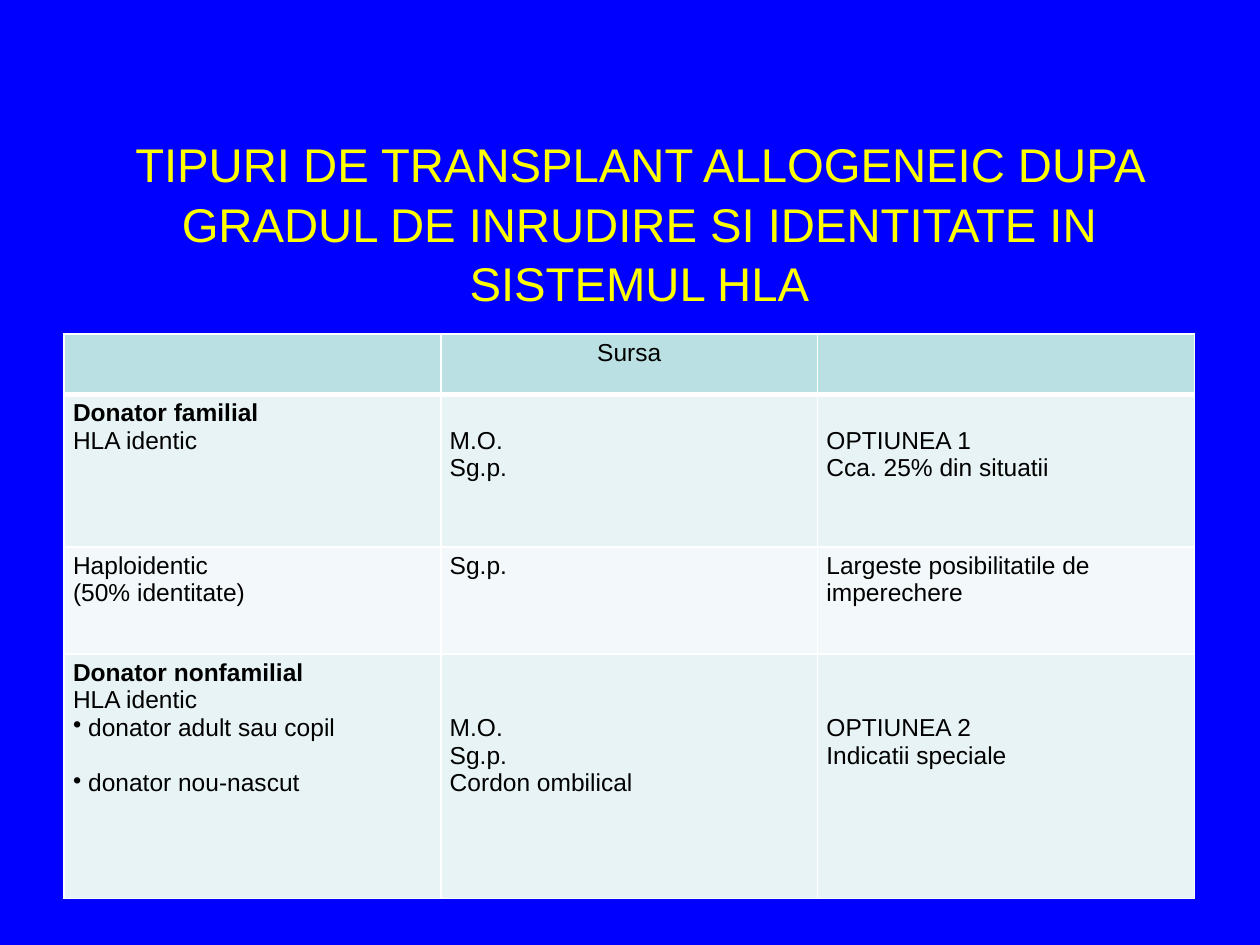
from pptx import Presentation
from pptx.util import Inches, Pt
from pptx.dml.color import RGBColor as RGB
from pptx.enum.text import PP_ALIGN as Align, MSO_ANCHOR as Anchor
from pptx.oxml.ns import qn
from lxml.etree import SubElement as Sub

HUES = {"back": "0000FF", "title": "FFFF00", "text": "000000", "line": "FFFFFF",
        "head": "BBE0E3", "dark": "E7F3F4", "light": "F3F9FA"}
LINE = 0.22  # height of one table text line, inches


def style(para, size, hue, bold=False):
    look = {"name": "Arial", "size": Pt(size), "bold": bold}
    for key, val in look.items():
        setattr(para.font, key, val)
    para.font.color.rgb = RGB.from_string(HUES[hue])


def edge(cell, side, width):
    line = Sub(cell._tc.get_or_add_tcPr(), qn("a:ln" + side), w=str(Pt(width)))
    fill = Sub(line, qn("a:solidFill"))
    Sub(fill, qn("a:srgbClr"), val=HUES["line"])


# Slide and background
prs = Presentation()
prs.slide_width, prs.slide_height = Inches(10), Inches(7.5)
slide = prs.slides.add_slide(prs.slide_layouts[5])
slide.background.fill.solid()
slide.background.fill.fore_color.rgb = RGB.from_string(HUES["back"])

# Title
title = slide.shapes.title
place = {"left": 0.51, "top": 1.29, "width": 9.13, "height": 0.94}
for key, val in place.items():
    setattr(title, key, Inches(val))
frame = title.text_frame
frame.text = ("TIPURI DE TRANSPLANT ALLOGENEIC DUPA GRADUL DE INRUDIRE "
              "SI IDENTITATE IN SISTEMUL HLA")
frame.word_wrap = True
frame.vertical_anchor = Anchor.MIDDLE
para = frame.paragraphs[0]
para.alignment = Align.CENTER
para.line_spacing = 1.05
style(para, 27, "title")

# Rows: height, fill, lines skipped above columns 2 and 3, cell texts
# A leading * marks bold, a leading • marks a bullet
rows = [
    (0.48, "head", 0, ["", "Sursa", ""]),
    (1.21, "dark", 1, ["*Donator familial\nHLA identic", "M.O.\nSg.p.",
                       "OPTIUNEA 1\nCca. 25% din situatii"]),
    (0.85, "light", 0, ["Haploidentic\n(50% identitate)", "Sg.p.",
                        "Largeste posibilitatile de imperechere"]),
    (1.94, "dark", 2, ["*Donator nonfamilial\nHLA identic\n"
                       "•donator adult sau copil\n•donator nou-nascut",
                       "M.O.\nSg.p.\nCordon ombilical",
                       "OPTIUNEA 2\nIndicatii speciale"]),
]

# Table
table = slide.shapes.add_table(len(rows), 3, Inches(0.51), Inches(2.65),
                               Inches(8.98), Inches(4.48)).table
for col in table.columns:
    col.width = Inches(2.99)
for r, (high, fill, skip, texts) in enumerate(rows):
    table.rows[r].height = Inches(high)
    for c, text in enumerate(texts):
        cell = table.cell(r, c)
        gap = skip * LINE if c else 0
        pads = {"left": 0.07, "right": 0.07, "top": 0.04 + gap, "bottom": 0.04}
        for side, val in pads.items():
            setattr(cell, "margin_" + side, Inches(val))
        for side in "LRTB":
            thick = (r == 0 and side == "B") or (r == 1 and side == "T")
            edge(cell, side, 3 if thick else 1)
        cell.fill.solid()
        cell.fill.fore_color.rgb = RGB.from_string(HUES[fill])
        cell.text = text.replace("*", "").replace("•", "")
        items = text.split("\n")
        for i, (para, item) in enumerate(zip(cell.text_frame.paragraphs, items)):
            style(para, 14, "text", item.startswith("*"))
            para.alignment = Align.LEFT if r else Align.CENTER
            if item.startswith("•"):
                if items[i - 1].startswith("•"):
                    para.space_before = Pt(16)
                props = para._p.get_or_add_pPr()
                props.set("marL", str(Inches(0.12)))
                props.set("indent", str(-Inches(0.12)))
                mark = Sub(props, qn("a:buChar"), char="•")
                props.find(qn("a:defRPr")).addprevious(mark)

prs.save("out.pptx")
